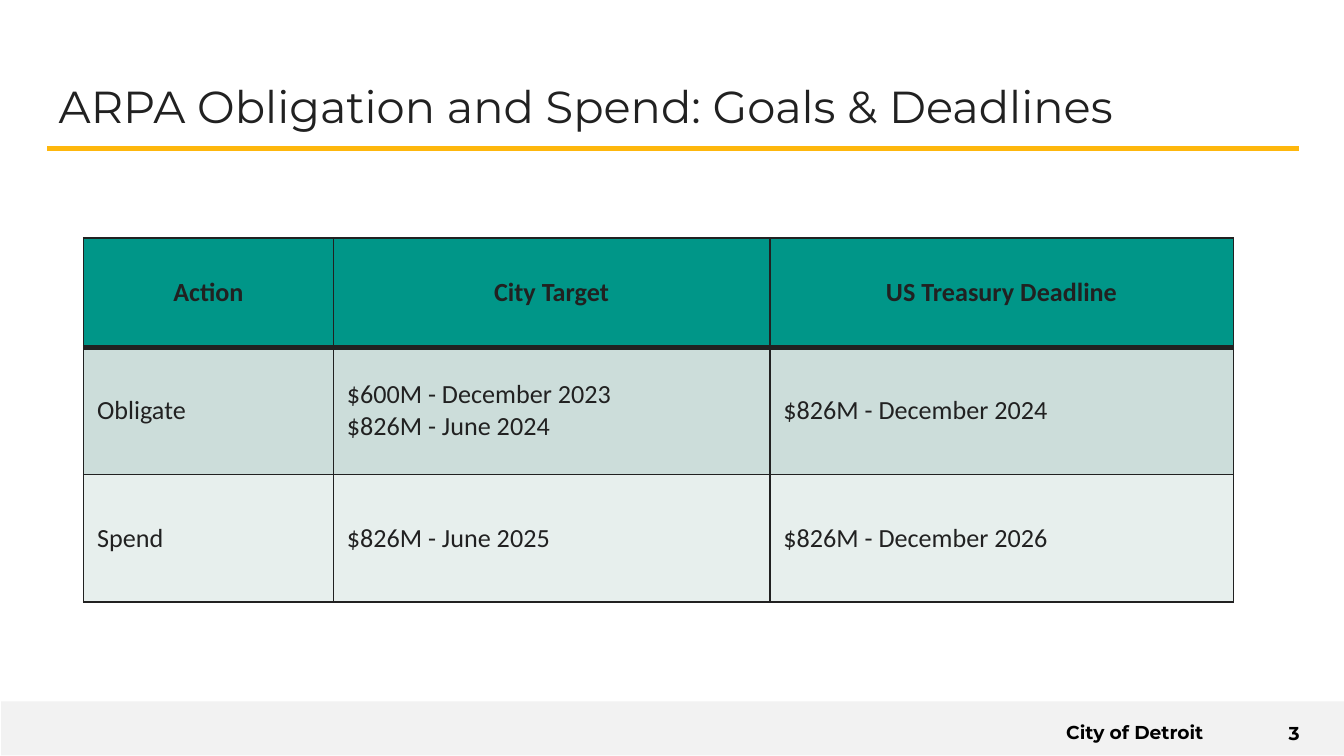
from dataclasses import dataclass

from lxml.etree import SubElement
from pptx import Presentation
from pptx.dml.color import RGBColor
from pptx.enum.shapes import MSO_CONNECTOR, MSO_SHAPE
from pptx.enum.text import MSO_ANCHOR, PP_ALIGN
from pptx.oxml.ns import qn
from pptx.slide import Slide
from pptx.table import _Cell
from pptx.text.text import TextFrame
from pptx.util import Cm, Pt

WHITE = RGBColor(0xFF, 0xFF, 0xFF)
BLACK = RGBColor(0x00, 0x00, 0x00)
INK = RGBColor(0x21, 0x21, 0x21)
GOLD = RGBColor(0xFE, 0xB7, 0x0D)
FOOTER_GREY = RGBColor(0xF2, 0xF2, 0xF2)
TEAL = RGBColor(0x00, 0x96, 0x88)
PALE_TEAL = RGBColor(0xCC, 0xDD, 0xDA)
PALEST_TEAL = RGBColor(0xE7, 0xEF, 0xED)

TITLE_FONT = {"name": "Montserrat", "size": Pt(24), "bold": False}
FOOTER_FONT = {"name": "Montserrat", "size": Pt(10), "bold": True}
HEADER_FONT = {"name": "Calibri", "size": Pt(14), "bold": True}
BODY_FONT = HEADER_FONT | {"bold": False}
INSETS = {f"margin_{side}": Cm(0.25) for side in ("left", "top", "right", "bottom")}


@dataclass(frozen=True)
class Label:
    text: str
    left: float
    top: float
    width: float
    height: float
    font: dict
    color: RGBColor
    align: PP_ALIGN = PP_ALIGN.RIGHT
    anchor: MSO_ANCHOR = MSO_ANCHOR.TOP


@dataclass(frozen=True)
class Row:
    cells: tuple[str, ...]
    height: float
    fill: RGBColor
    font: dict
    align: PP_ALIGN = PP_ALIGN.LEFT
    top_rule: float = 1
    bottom_rule: float = 1


LABELS = (
    Label("City of Detroit", 16, 13.41, 6.99, 0.91, FOOTER_FONT, BLACK),
    Label("3", 23.57, 13.46, 1.24, 0.81, FOOTER_FONT, BLACK, anchor=MSO_ANCHOR.MIDDLE),
    Label("ARPA Obligation and Spend: Goals & Deadlines", 0.86, 1.24, 23.67, 1.6,
          TITLE_FONT, INK, PP_ALIGN.LEFT),
)
COLUMN_WIDTHS = (4.72, 8.25, 8.76)
ROWS = (
    Row(("Action", "City Target", "US Treasury Deadline"), 2.06, TEAL,
        HEADER_FONT, PP_ALIGN.CENTER, bottom_rule=3),
    Row(("Obligate", "$600M - December 2023\n$826M - June 2024", "$826M - December 2024"),
        2.41, PALE_TEAL, BODY_FONT, top_rule=3),
    Row(("Spend", "$826M - June 2025", "$826M - December 2026"),
        2.41, PALEST_TEAL, BODY_FONT),
)


def apply_format(target: object, values: dict) -> None:
    for name, value in values.items():
        setattr(target, name, value)


def write_text(frame: TextFrame, text: str, font: dict, color: RGBColor,
               align: PP_ALIGN) -> None:
    frame.text = text
    for paragraph in frame.paragraphs:
        paragraph.alignment = align
        for run in paragraph.runs:
            apply_format(run.font, font)
            run.font.color.rgb = color


def add_label(slide: Slide, label: Label) -> None:
    frame = slide.shapes.add_textbox(
        Cm(label.left), Cm(label.top), Cm(label.width), Cm(label.height)).text_frame
    apply_format(frame, INSETS | {"word_wrap": True, "vertical_anchor": label.anchor})
    write_text(frame, label.text, label.font, label.color, label.align)


def add_borders(cell: _Cell, row: Row) -> None:
    """Rule all four sides; must run before the fill, which follows the rules in XML."""
    properties = cell._tc.get_or_add_tcPr()
    widths = {"a:lnL": 1, "a:lnR": 1, "a:lnT": row.top_rule, "a:lnB": row.bottom_rule}
    for tag, width in widths.items():
        rule = SubElement(properties, qn(tag), w=str(Pt(width)))
        SubElement(SubElement(rule, qn("a:solidFill")), qn("a:srgbClr"), val=str(INK))


def add_deadline_table(slide: Slide) -> None:
    table = slide.shapes.add_table(
        len(ROWS), len(COLUMN_WIDTHS), Cm(1.58), Cm(4.5),
        Cm(sum(COLUMN_WIDTHS)), Cm(sum(row.height for row in ROWS))).table
    apply_format(table, {"first_row": True, "horz_banding": False})
    for column, width in zip(table.columns, COLUMN_WIDTHS):
        column.width = Cm(width)
    for table_row, row in zip(table.rows, ROWS):
        table_row.height = Cm(row.height)
        for cell, text in zip(table_row.cells, row.cells):
            add_borders(cell, row)
            cell.fill.solid()
            cell.fill.fore_color.rgb = row.fill
            cell.vertical_anchor = MSO_ANCHOR.MIDDLE
            write_text(cell.text_frame, text, row.font, INK, row.align)


def add_footer_band(slide: Slide) -> None:
    band = slide.shapes.add_shape(
        MSO_SHAPE.RECTANGLE, Cm(0.02), Cm(13.26), Cm(25.4), Cm(1.02))
    band.shadow.inherit = False
    band.fill.solid()
    band.fill.fore_color.rgb = FOOTER_GREY
    band.line.fill.background()


def add_title_rule(slide: Slide) -> None:
    rule = slide.shapes.add_connector(
        MSO_CONNECTOR.STRAIGHT, Cm(0.89), Cm(2.81), Cm(24.55), Cm(2.81))
    rule.line.color.rgb = GOLD
    rule.line.width = Pt(3)
    SubElement(rule._element.spPr, qn("a:effectLst"))


def main() -> None:
    deck = Presentation()
    apply_format(deck, {"slide_width": Cm(25.4), "slide_height": Cm(14.29)})
    slide = deck.slides.add_slide(deck.slide_layouts[6])
    slide.background.fill.solid()
    slide.background.fill.fore_color.rgb = WHITE
    add_footer_band(slide)
    add_title_rule(slide)
    for label in LABELS:
        add_label(slide, label)
    add_deadline_table(slide)
    deck.save("out.pptx")


if __name__ == "__main__":
    main()
